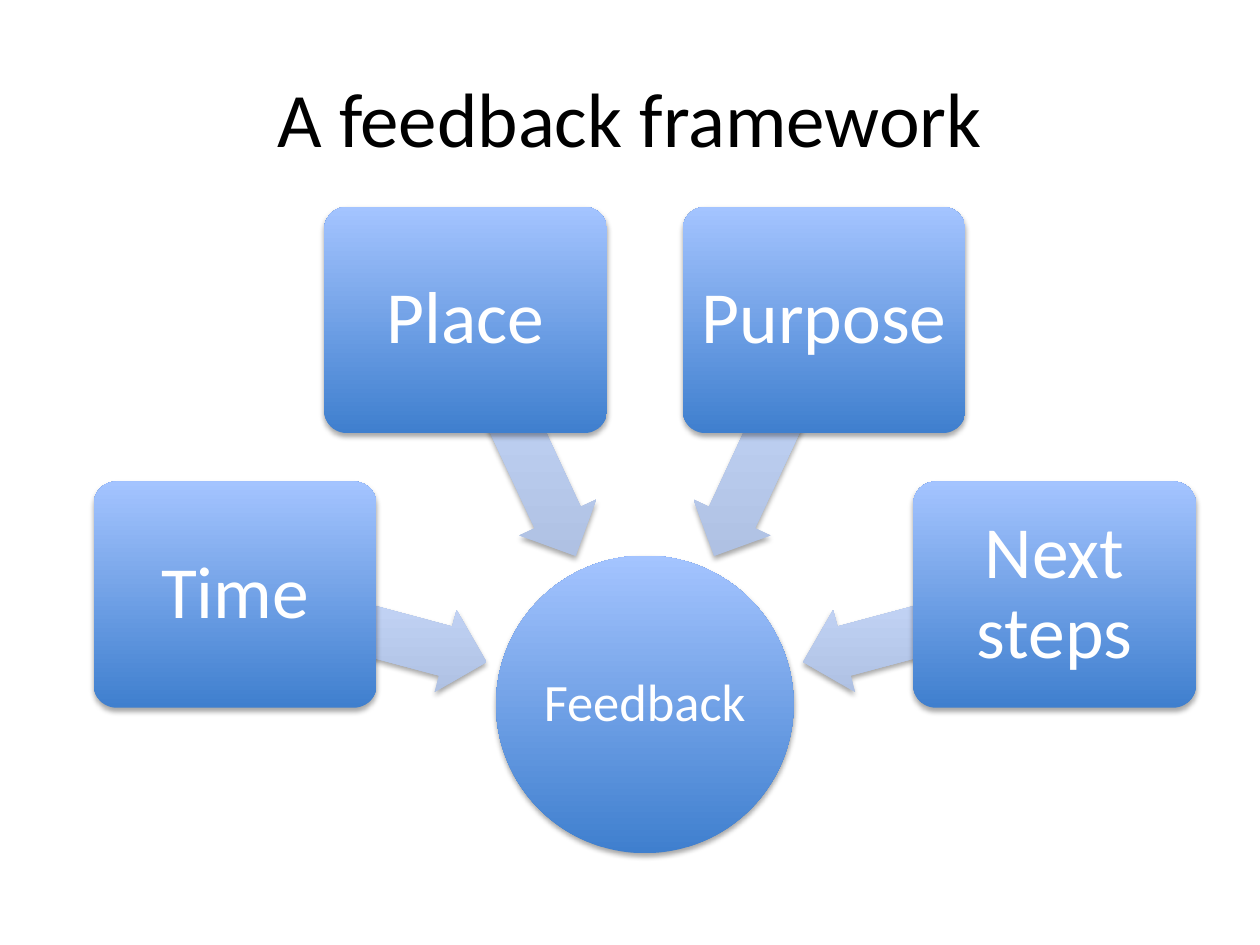
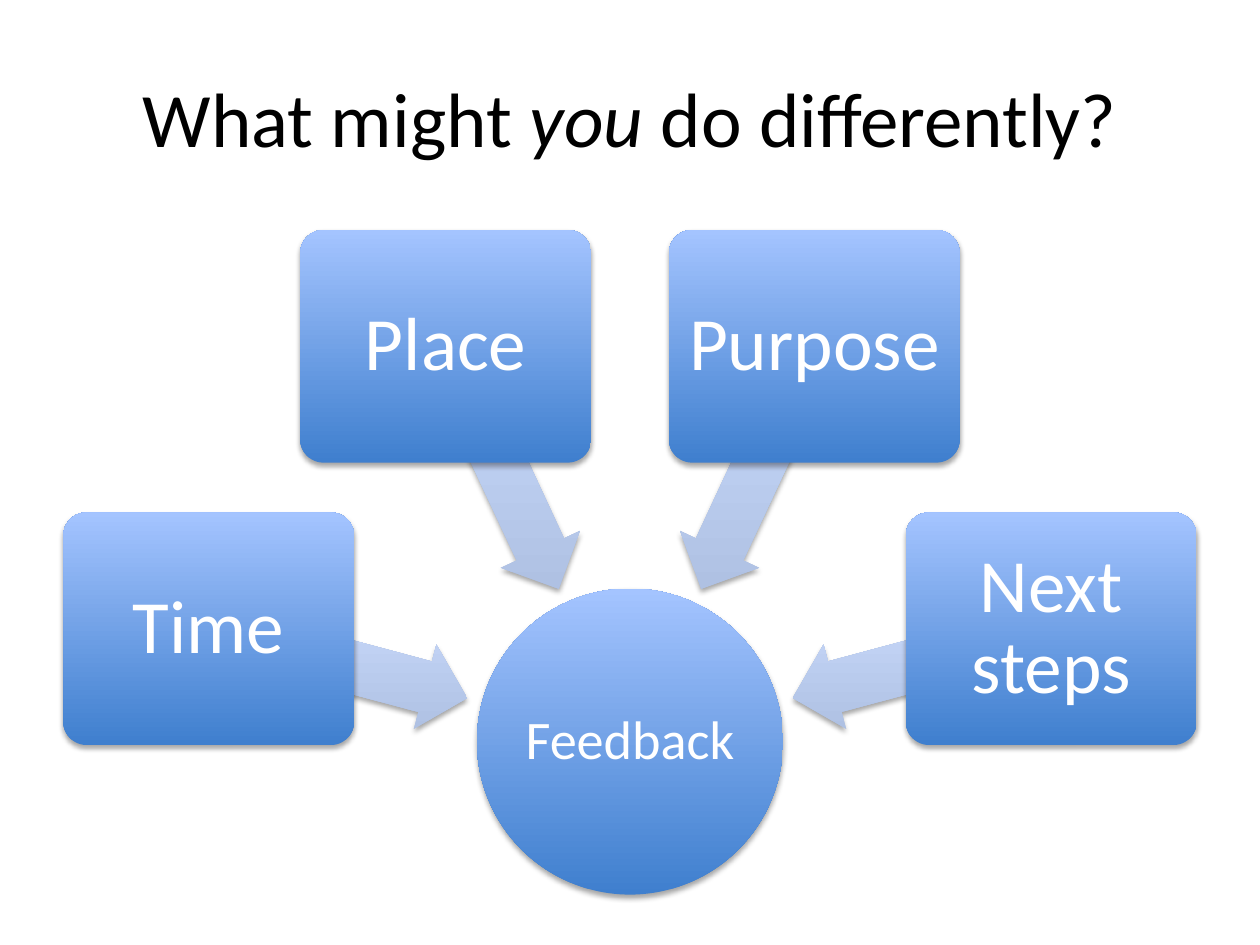
import math
from dataclasses import dataclass

import pptx
import pptx.dml.color
import pptx.enum.shapes
import pptx.enum.text
import pptx.oxml
import pptx.oxml.ns
import pptx.util
from lxml import etree

Cm, Pt = pptx.util.Cm, pptx.util.Pt
RGB = pptx.dml.color.RGBColor.from_string
SHAPE = pptx.enum.shapes.MSO_SHAPE
MIDDLE = pptx.enum.text.MSO_ANCHOR.MIDDLE
CENTER = pptx.enum.text.PP_ALIGN.CENTER
qn = pptx.oxml.ns.qn


@dataclass(frozen=True)
class Theme:
    font: str = "Calibri"
    title_color: str = "000000"
    label_color: str = "FFFFFF"
    shadow_color: str = "000000"
    node_gradient: tuple = ("3F7FCE", "A4C4FF")   # bottom, top
    arrow_gradient: tuple = ("ADBFE1", "CCDDFF")
    title_size: int = 44


THEME = Theme()

# Angle of each topic around the hub, clockwise from the left
TOPICS = (("Time", 15), ("Place", 65), ("Purpose", 115), ("Next steps", 165))

# Proportions relative to the hub diameter
BOX_W, BOX_H, BOX_RADIUS = 0.95, 0.76, 1.425
ARROW_W, ARROW_H, ARROW_RADIUS = 0.873, 0.285, 0.987


def style_paragraph(p, size, color):
    p.alignment = CENTER
    p.font.name = THEME.font
    p.font.size = Pt(size)
    p.font.color.rgb = RGB(color)


def add_title(slide, runs):
    """Centred title; runs are (text, italic) pairs."""
    s = slide.shapes.add_textbox(Cm(1.27), Cm(0.76), Cm(22.86), Cm(3.18))
    tf = s.text_frame
    tf.word_wrap = True
    tf.vertical_anchor = MIDDLE
    p = tf.paragraphs[0]
    style_paragraph(p, THEME.title_size, THEME.title_color)
    for text, italic in runs:
        r = p.add_run()
        r.text = text
        if italic:
            r.font.italic = True


def add_shadow(s):
    s.shadow.inherit = False
    effects = s._element.spPr.find(qn("a:effectLst"))
    outer = etree.SubElement(effects, qn("a:outerShdw"), blurRad=str(Pt(3.1)),
                             dist=str(Pt(1.8)), dir="5400000", rotWithShape="0")
    color = etree.SubElement(outer, qn("a:srgbClr"), val=THEME.shadow_color)
    etree.SubElement(color, qn("a:alpha"), val="35000")


def add_centered_shape(slide, kind, x, y, w, h, gradient):
    """Shape centred on (x, y) in cm, with an upright gradient and a shadow."""
    s = slide.shapes.add_shape(kind, Cm(x - w / 2), Cm(y - h / 2), Cm(w), Cm(h))
    s.fill.gradient()
    s.fill.gradient_angle = 90
    for stop, color in zip(s.fill.gradient_stops, gradient):
        stop.color.rgb = RGB(color)
    s._element.spPr.find(qn("a:gradFill")).set("rotWithShape", "0")
    s.line.fill.background()
    add_shadow(s)
    return s


def add_label(s, text, size, margin):
    tf = s.text_frame
    tf.word_wrap = True
    tf.vertical_anchor = MIDDLE
    tf.margin_left = tf.margin_right = tf.margin_top = tf.margin_bottom = Cm(margin)
    p = tf.paragraphs[0]
    p.text = text
    p.line_spacing = 0.9
    style_paragraph(p, size, THEME.label_color)


def add_hub(slide, x, y, d, size):
    s = add_centered_shape(slide, SHAPE.OVAL, x, y, d, d, THEME.node_gradient)
    add_label(s, "Feedback", size, 0.05)


def add_arrow(slide, x, y, d, angle):
    s = add_centered_shape(slide, SHAPE.LEFT_ARROW, x, y, ARROW_W * d,
                           ARROW_H * d, THEME.arrow_gradient)
    s.adjustments[0], s.adjustments[1] = 0.6, 0.5
    s.rotation = 180 + angle


def add_topic(slide, x, y, d, text, size):
    s = add_centered_shape(slide, SHAPE.ROUNDED_RECTANGLE, x, y, BOX_W * d,
                           BOX_H * d, THEME.node_gradient)
    s.adjustments[0] = 0.1
    add_label(s, text, size, 0.23)


def add_converging_diagram(slide, x, y, d, hub_size, topic_size):
    """Topics on an arc, each with an arrow pointing at the hub."""
    add_hub(slide, x, y, d, hub_size)
    for text, angle in TOPICS:
        dx = -d * math.cos(math.radians(angle))
        dy = -d * math.sin(math.radians(angle))
        add_arrow(slide, x + ARROW_RADIUS * dx, y + ARROW_RADIUS * dy, d, angle)
        add_topic(slide, x + BOX_RADIUS * dx, y + BOX_RADIUS * dy, d, text, topic_size)


def main():
    prs = pptx.Presentation()
    prs.slide_width, prs.slide_height = Cm(25.4), Cm(19.05)
    blank = prs.slide_layouts[6]

    # Framework
    slide = prs.slides.add_slide(blank)
    add_title(slide, [("A feedback framework", False)])
    add_converging_diagram(slide, 13, 14.2, 6, hub_size=30, topic_size=42)

    # Reflection question
    slide = prs.slides.add_slide(blank)
    add_title(slide, [("What might ", False), ("you", True), (" do differently?", False)])
    add_converging_diagram(slide, 12.7, 14.95, 6.17, hub_size=31, topic_size=43)

    prs.save("out.pptx")


if __name__ == "__main__":
    main()
